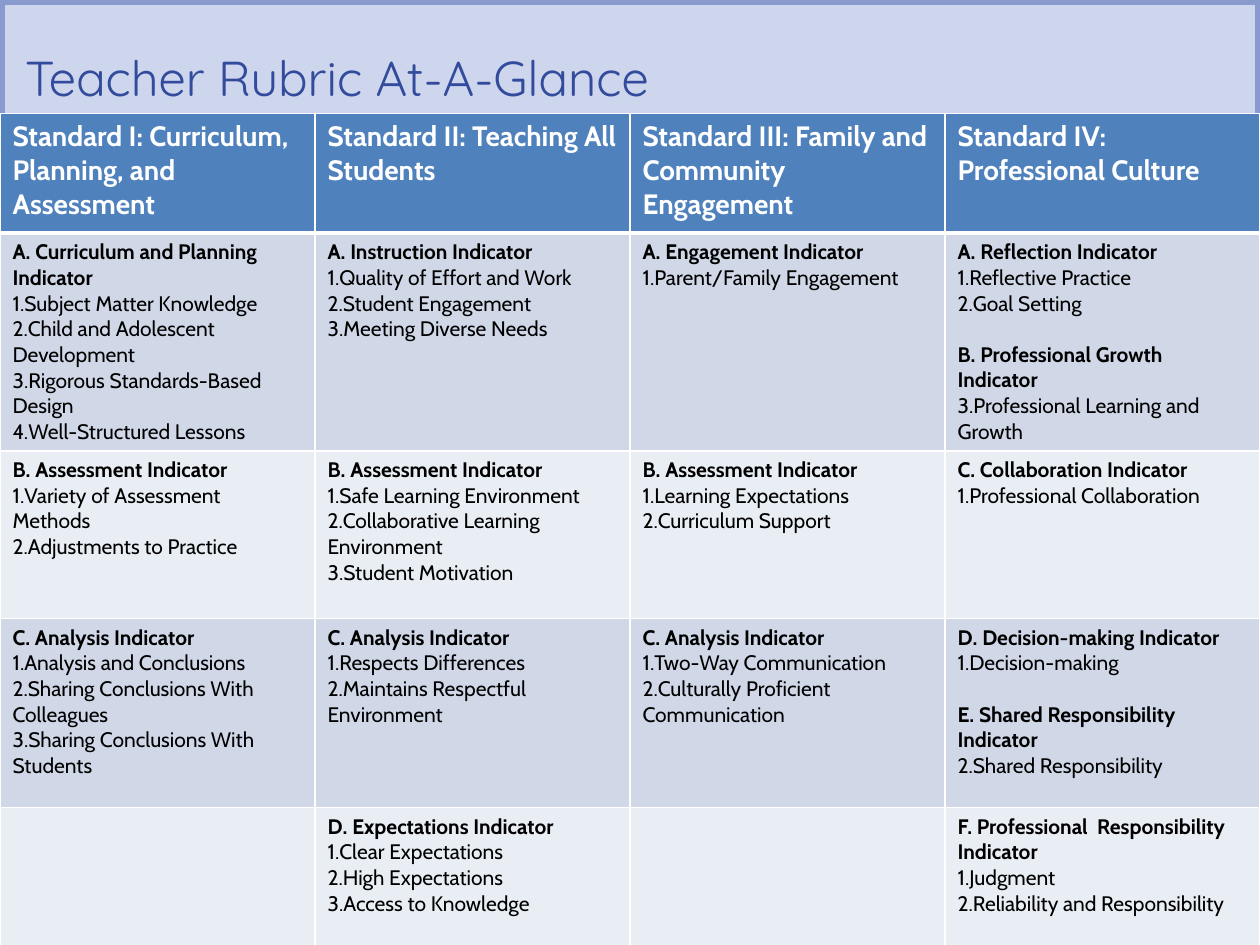
from dataclasses import dataclass
from pptx import Presentation
from pptx.dml.color import RGBColor
from pptx.enum.shapes import MSO_SHAPE
from pptx.enum.text import MSO_ANCHOR, PP_ALIGN
from pptx.oxml.ns import qn
from pptx.util import Cm, Pt
from lxml.etree import SubElement

TITLE = "Teacher Rubric At-A-Glance"
STANDARDS = [
    "Standard I: Curriculum, Planning, and Assessment",
    "Standard II: Teaching All Students",
    "Standard III: Family and Community Engagement",
    "Standard IV: Professional Culture",
]
INDICATORS = [
    [
        [("A. Curriculum and Planning Indicator", [
            "Subject Matter Knowledge", "Child and Adolescent Development",
            "Rigorous Standards-Based Design", "Well-Structured Lessons"])],
        [("A. Instruction Indicator", [
            "Quality of Effort and Work", "Student Engagement", "Meeting Diverse Needs"])],
        [("A. Engagement Indicator", ["Parent/Family Engagement"])],
        [("A. Reflection Indicator", ["Reflective Practice", "Goal Setting"]),
         ("B. Professional Growth Indicator", ["Professional Learning and Growth"])],
    ],
    [
        [("B. Assessment Indicator", [
            "Variety of Assessment Methods", "Adjustments to Practice"])],
        [("B. Assessment Indicator", [
            "Safe Learning Environment", "Collaborative Learning Environment",
            "Student Motivation"])],
        [("B. Assessment Indicator", ["Learning Expectations", "Curriculum Support"])],
        [("C. Collaboration Indicator", ["Professional Collaboration"])],
    ],
    [
        [("C. Analysis Indicator", [
            "Analysis and Conclusions", "Sharing Conclusions With Colleagues",
            "Sharing Conclusions With Students"])],
        [("C. Analysis Indicator", [
            "Respects Differences", "Maintains Respectful Environment"])],
        [("C. Analysis Indicator", [
            "Two-Way Communication", "Culturally Proficient Communication"])],
        [("D. Decision-making Indicator", ["Decision-making"]),
         ("E. Shared Responsibility Indicator", ["Shared Responsibility"])],
    ],
    [
        [],
        [("D. Expectations Indicator", [
            "Clear Expectations", "High Expectations", "Access to Knowledge"])],
        [],
        [("F. Professional  Responsibility Indicator", [
            "Judgment", "Reliability and Responsibility"])],
    ],
]
ROW_HEIGHTS = [2.41, 4.39, 3.38, 3.81, 2.84]
WIDTH, HEIGHT = 25.4, 19.05
BANNER_HEIGHT, TABLE_TOP = 3.18, 2.29


@dataclass(frozen=True)
class Theme:
    title_font: str = "Quicksand"
    body_font: str = "Cabin"
    title_size: int = 28
    header_size: int = 16
    body_size: int = 12
    title: str = "334B9C"
    banner: str = "CED6ED"
    frame: str = "899ACE"
    header: str = "4F81BD"
    bands: tuple = ("D0D8E8", "E9EDF4")
    white: str = "FFFFFF"
    text: str = "000000"


THEME = Theme()


def add_panel(s, top, height, fill=None):
    sp = s.shapes.add_shape(MSO_SHAPE.RECTANGLE, 0, Cm(top), Cm(WIDTH), Cm(height))
    sp.shadow.inherit = False
    if fill:
        sp.fill.solid()
        sp.fill.fore_color.rgb = RGBColor.from_string(fill)
    else:
        sp.fill.background()
    sp.line.color.rgb = RGBColor.from_string(THEME.frame)
    sp.line.width = Pt(6)
    return sp


def write(p, text, font, size, color, bold=False):
    p.text = text
    for r in p.runs:
        r.font.name = font
        r.font.size = Pt(size)
        r.font.bold = bold
        r.font.color.rgb = RGBColor.from_string(color)


def style_cell(cell, fill, top=1, bottom=1):
    tcPr = cell._tc.get_or_add_tcPr()
    for side, width in (("L", 1), ("R", 1), ("T", top), ("B", bottom)):
        ln = SubElement(tcPr, qn(f"a:ln{side}"), w=str(Pt(width)))
        SubElement(SubElement(ln, qn("a:solidFill")), qn("a:srgbClr"), val=THEME.white)
    cell.fill.solid()
    cell.fill.fore_color.rgb = RGBColor.from_string(fill)


def fill_indicators(tf, groups):
    lines = [(text, i == 0, g > 0 and i == 0)
             for g, (heading, items) in enumerate(groups)
             for i, text in enumerate([heading, *items])]
    for n, (text, is_heading, gap) in enumerate(lines):
        p = tf.add_paragraph() if n else tf.paragraphs[0]
        write(p, text, THEME.body_font, THEME.body_size, THEME.text, is_heading)
        if gap:
            p.space_before = Pt(14.6)
        if not is_heading:
            pPr = p._p.get_or_add_pPr()
            pPr.set("marL", "0")
            pPr.set("indent", "0")
            SubElement(pPr, qn("a:buFont"), typeface=THEME.body_font)
            SubElement(pPr, qn("a:buAutoNum"), type="arabicPeriod")


def add_title(s):
    tf = add_panel(s, 0, BANNER_HEIGHT, THEME.banner).text_frame
    tf.word_wrap = True
    tf.vertical_anchor = MSO_ANCHOR.BOTTOM
    tf.margin_left, tf.margin_right = Cm(0.51), Cm(1.27)
    tf.margin_top, tf.margin_bottom = 0, Cm(1.04)
    p = tf.paragraphs[0]
    p.alignment = PP_ALIGN.LEFT
    p.line_spacing = Pt(26)
    write(p, TITLE, THEME.title_font, THEME.title_size, THEME.title)


def add_rubric(s):
    table = s.shapes.add_table(len(ROW_HEIGHTS), len(STANDARDS), 0, Cm(TABLE_TOP),
                               Cm(WIDTH), Cm(sum(ROW_HEIGHTS))).table
    table.first_row = table.horz_banding = False
    for row, height in zip(table.rows, ROW_HEIGHTS):
        row.height = Cm(height)
    for c, standard in enumerate(STANDARDS):
        cell = table.cell(0, c)
        style_cell(cell, THEME.header, bottom=3)
        write(cell.text_frame.paragraphs[0], standard, THEME.body_font,
              THEME.header_size, THEME.white, True)
    for r, row in enumerate(INDICATORS):
        for c, groups in enumerate(row):
            cell = table.cell(r + 1, c)
            style_cell(cell, THEME.bands[r % 2], top=1 if r else 3)
            fill_indicators(cell.text_frame, groups)


def main():
    prs = Presentation()
    prs.slide_width, prs.slide_height = Cm(WIDTH), Cm(HEIGHT)
    s = prs.slides.add_slide(prs.slide_layouts[6])
    add_panel(s, BANNER_HEIGHT, HEIGHT - BANNER_HEIGHT)
    add_title(s)
    add_rubric(s)
    prs.save("out.pptx")


if __name__ == "__main__":
    main()
